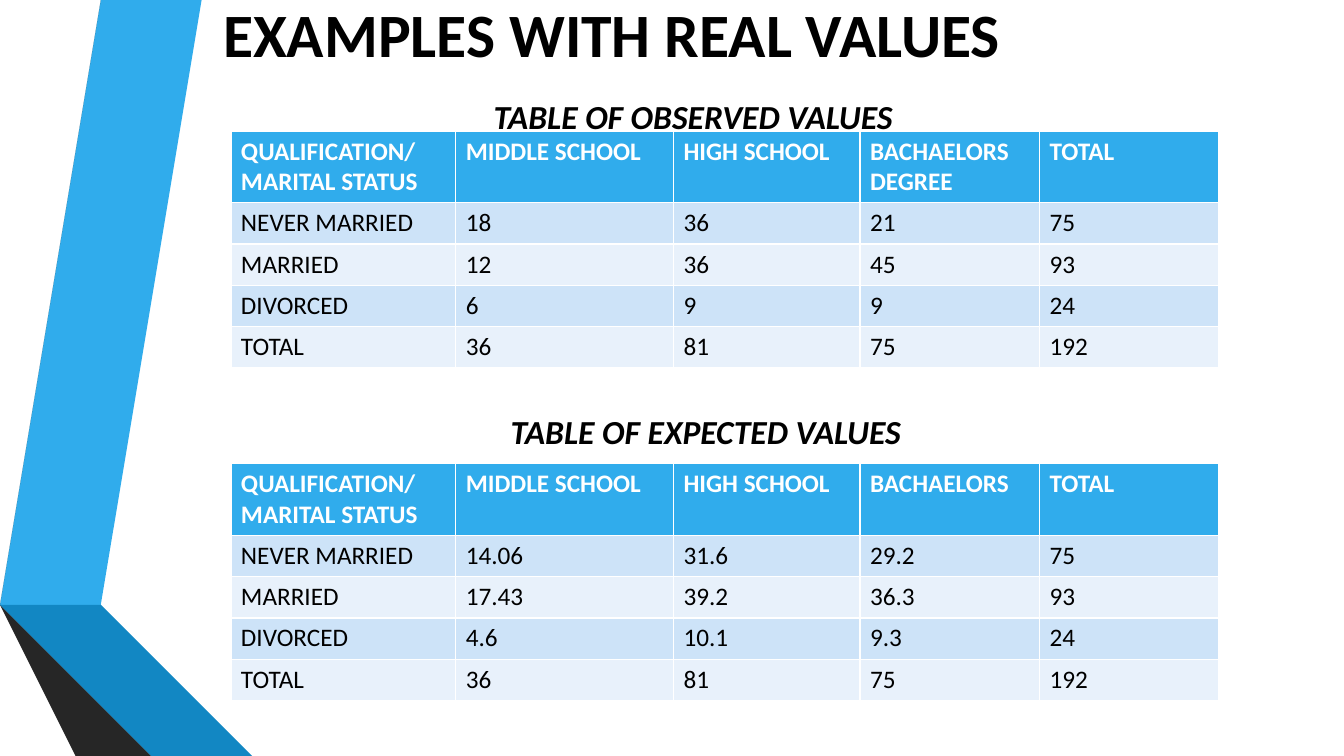
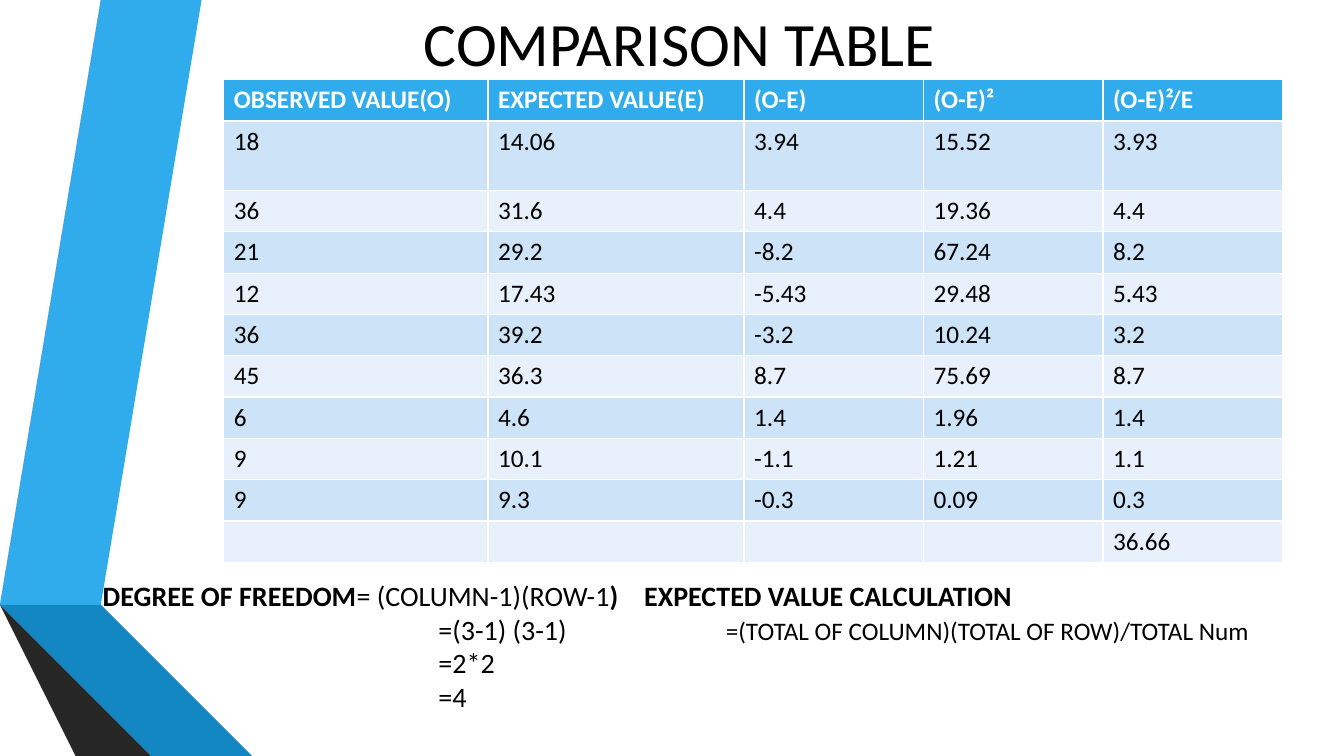
from pptx import Presentation
from pptx.dml.color import RGBColor
from pptx.enum.text import MSO_ANCHOR as Anchor, MSO_AUTO_SIZE as Fit, PP_ALIGN as Align
from pptx.oxml.ns import qn
from pptx.util import Inches, Pt
from lxml.etree import SubElement

BLACK = RGBColor(0x00, 0x00, 0x00)
WHITE = RGBColor(0xFF, 0xFF, 0xFF)
SKY = RGBColor(0x30, 0xAC, 0xEC)
BLUE = RGBColor(0x12, 0x87, 0xC3)
NAVY = RGBColor(0x0C, 0x5A, 0x82)
GRAY = RGBColor(0x59, 0x59, 0x59)
DARK = RGBColor(0x40, 0x40, 0x40)
COAL = RGBColor(0x26, 0x26, 0x26)
BAND = RGBColor(0xCD, 0xE3, 0xF8)
PALE = RGBColor(0xE8, 0xF1, 0xFB)
FACE = "Calibri"
ROW = 0.41


def label(box, text, size, at, bold=False, slant=False):
    box.left, box.top, box.width, box.height = [Inches(n) for n in at]
    frame = box.text_frame
    frame.text = text
    frame.word_wrap = False
    frame.auto_size = Fit.NONE
    frame.vertical_anchor = Anchor.TOP
    line = frame.paragraphs[0]
    line.alignment = Align.CENTER
    font = line.font
    font.name, font.size, font.color.rgb = FACE, Pt(size), BLACK
    font.bold, font.italic = bold, slant


def grid(slide, left, top, widths, heights, rows):
    size = Inches(sum(widths)), Inches(sum(heights))
    table = slide.shapes.add_table(
        len(rows), len(widths), Inches(left), Inches(top), *size).table
    for col, width in zip(table.columns, widths):
        col.width = Inches(width)
    for r, (row, height) in enumerate(zip(rows, heights)):
        table.rows[r].height = Inches(height)
        for c, text in enumerate(row):
            cell = table.cell(r, c)
            cell.text = text
            cell.fill.solid()
            cell.fill.fore_color.rgb = SKY if r == 0 else BAND if r % 2 else PALE
            font = cell.text_frame.paragraphs[0].font
            font.name, font.size, font.bold = FACE, Pt(18), r == 0
            font.color.rgb = BLACK if r else WHITE


deck = Presentation()
deck.slide_width, deck.slide_height = Inches(13.33), Inches(7.5)
layout = deck.slide_layouts[5]
values = deck.slides.add_slide(layout)
compare = deck.slides.add_slide(layout)

ribbons = [
    (SKY, [(0.5, 5.78), (0.77, 5.83), (1.73, 0), (1.45, 0)]),
    (GRAY, [(1.39, 0), (1.11, 0), (0.16, 5.73), (0.44, 5.77)]),
    (COAL, [(0.16, 5.73), (1.45, 7.5), (1.51, 7.5)]),
    (NAVY, [(0.5, 5.79), (2.08, 7.5), (2.14, 7.5)]),
    (BLUE, [(0.5, 5.79), (2.14, 7.5), (2.83, 7.5), (0.77, 5.83), (0.5, 5.78)]),
    (DARK, [(2.02, 7.5), (0.48, 5.83), (0.44, 5.77), (0.16, 5.73), (1.51, 7.5)]),
]
group = values.shapes.add_group_shape()
for color, points in ribbons:
    path = group.shapes.build_freeform(*points[0], scale=Inches(1))
    path.add_line_segments(points[1:])
    ribbon = path.convert_to_shape()
    ribbon.shadow.inherit = False
    ribbon.fill.solid()
    ribbon.fill.fore_color.rgb = color
    ribbon.line.fill.background()
tree = layout.shapes.element
tree.append(group.element)
for n, tag in enumerate(tree.xpath(".//p:cNvPr"), 1):
    tag.set("id", str(n))

label(values.shapes.title, "EXAMPLES WITH REAL VALUES", 44, (1.67, -0.09, 8.8, 0.84), True)
head = ["QUALIFICATION/MARITAL STATUS", "MIDDLE SCHOOL", "HIGH SCHOOL"]
status = ["NEVER MARRIED", "MARRIED", "DIVORCED", "TOTAL"]
sums = ["36", "81", "75", "192"]
tables = [
    ("TABLE OF OBSERVED VALUES", (4.54, 0.9, 4.67, 0.5), 1.3, "BACHAELORS DEGREE",
     [["18", "36", "21", "75"], ["12", "36", "45", "93"], ["6", "9", "9", "24"], sums]),
    ("TABLE OF EXPECTED VALUES", (4.74, 4.03, 4.52, 0.5), 4.6, "BACHAELORS",
     [["14.06", "31.6", "29.2", "75"], ["17.43", "39.2", "36.3", "93"],
      ["4.6", "10.1", "9.3", "24"], sums]),
]
for name, spot, top, degree, counts in tables:
    rows = [head + [degree, "TOTAL"]]
    rows += [[kind] + count for kind, count in zip(status, counts)]
    grid(values, 2.29, top, [2.23, 2.16, 1.85, 1.78, 1.78], [0.69] + [ROW] * 4, rows)
    box = values.shapes.add_textbox(0, 0, 0, 0)
    label(box, name, 24, spot, True, True)

label(compare.shapes.title, "COMPARISON TABLE", 44, (3.86, 0, 5.76, 0.84))
rows = [
    ["OBSERVED VALUE(O)", "EXPECTED VALUE(E)", "(O-E)", "(O-E)²", "(O-E)²/E"],
    ["18", "14.06", "3.94", "15.52", "3.93"],
    ["36", "31.6", "4.4", "19.36", "4.4"],
    ["21", "29.2", "-8.2", "67.24", "8.2"],
    ["12", "17.43", "-5.43", "29.48", "5.43"],
    ["36", "39.2", "-3.2", "10.24", "3.2"],
    ["45", "36.3", "8.7", "75.69", "8.7"],
    ["6", "4.6", "1.4", "1.96", "1.4"],
    ["9", "10.1", "-1.1", "1.21", "1.1"],
    ["9", "9.3", "-0.3", "0.09", "0.3"],
    ["", "", "", "", "36.66"],
]
grid(compare, 2.22, 0.79, [2.62, 2.54, 1.78, 1.78, 1.78], [ROW, 0.69] + [ROW] * 9, rows)

notes = [
    ([5.37], [("DEGREE OF FREEDOM", 20, True), ("= (COLUMN-1)(ROW-1", 20, False),
              (")\tEXPECTED VALUE CALCULATION", 20, True)]),
    ([3.33, 6.18], [("\t=(3-1) (3-1)\t", 20, False),
                    ("=(TOTAL OF COLUMN)(TOTAL OF ROW)/TOTAL Num", 18, False)]),
    ([3.33], [("\t=2*2", 20, False)]),
    ([3.33], [("\t=4", 20, False)]),
]
box = compare.shapes.add_textbox(Inches(0.92), Inches(5.69), Inches(12.01), Inches(1.45))
frame = box.text_frame
frame.word_wrap = True
for n, (stops, parts) in enumerate(notes):
    line = frame.add_paragraph() if n else frame.paragraphs[0]
    props = line._p.get_or_add_pPr()
    tabs = SubElement(props, qn("a:tabLst"))
    for stop in stops:
        SubElement(tabs, qn("a:tab"), pos=str(Inches(stop)), algn="l")
    line.font.name, line.font.color.rgb = FACE, BLACK
    for text, size, bold in parts:
        run = line.add_run()
        run.text = text
        run.font.size, run.font.bold = Pt(size), bold

deck.save("out.pptx")
